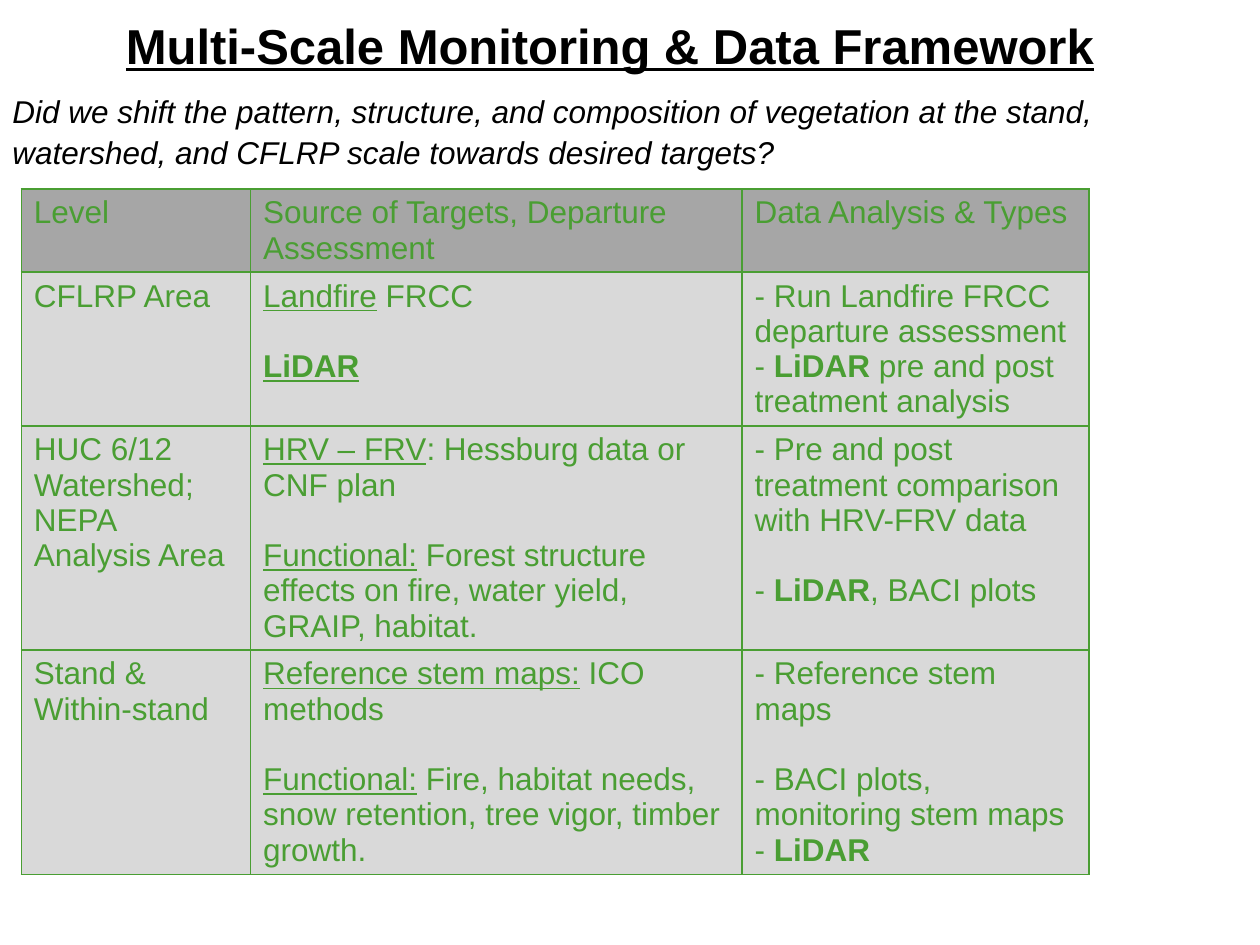
import pptx
import pptx.dml.color
import pptx.enum.shapes
import pptx.enum.text
import pptx.oxml
import pptx.oxml.ns
import pptx.util
from pptx.util import Cm

FONT = "Arial"
COLORS = {
    "black": "000000",
    "white": "FFFFFF",
    "green": "4A9E33",
    "header": "A6A6A6",
    "body": "D9D9D9",
}
GAP = pptx.util.Pt(20.1)  # one text line between groups in a cell

COLUMN_WIDTHS = [4.62, 9.91, 6.99]
ROW_HEIGHTS = [1.6, 2.97, 3.66, 3.66]

# A cell is a list of groups, a group a list of paragraphs,
# a paragraph a list of (text, style) runs: b bold, i italic, u underlined.
LIDAR_ITEM = [("- ", ""), ("LiDAR", "b")]
ROWS = [
    [
        [[[("Level", "")]]],
        [[[("Source of Targets, Departure Assessment", "")]]],
        [[[("Data Analysis & Types", "")]]],
    ],
    [
        [[[("CFLRP Area", "")]]],
        [[[("Landfire", "u"), (" FRCC", "")]], [[("LiDAR", "bu")]]],
        [[[("- Run Landfire FRCC departure assessment", "")],
          LIDAR_ITEM + [(" pre and post treatment analysis", "")]]],
    ],
    [
        [[[("HUC 6/12 Watershed; NEPA Analysis Area", "")]]],
        [[[("HRV – FRV", "u"), (": Hessburg data or CNF plan", "")]],
         [[("Functional:", "u"),
           (" Forest structure effects on fire, water yield, GRAIP, habitat.", "")]]],
        [[[("- Pre and post treatment comparison with HRV-FRV data", "")]],
         [LIDAR_ITEM + [(", BACI plots", "")]]],
    ],
    [
        [[[("Stand & Within-stand", "")]]],
        [[[("Reference stem maps:", "u"), (" ", "i"), ("ICO methods", "")]],
         [[("Functional:", "u"),
           (" Fire, habitat needs, snow retention, tree vigor, timber growth.", "")]]],
        [[[("- Reference stem maps", "")]],
         [[("- BACI plots, monitoring stem maps", "")], LIDAR_ITEM]],
    ],
]


def rgb(name):
    return pptx.dml.color.RGBColor.from_string(COLORS[name])


def add_run(paragraph, text, size, color, style=""):
    run = paragraph.add_run()
    run.text = text
    run.font.name = FONT
    run.font.size = pptx.util.Pt(size)
    run.font.color.rgb = rgb(color)
    run.font.bold = "b" in style
    run.font.italic = "i" in style
    run.font.underline = "u" in style


def add_title(slide, left, top, width, height):
    title = slide.shapes.title
    title.left, title.top, title.width, title.height = left, top, width, height
    frame = title.text_frame
    frame.auto_size = pptx.enum.text.MSO_AUTO_SIZE.NONE
    frame.vertical_anchor = pptx.enum.text.MSO_ANCHOR.MIDDLE
    frame.margin_top = frame.margin_bottom = 0
    paragraph = frame.paragraphs[0]
    paragraph.alignment = pptx.enum.text.PP_ALIGN.CENTER
    add_run(paragraph, "Multi-Scale Monitoring & Data Framework", 28, "black", "bu")


def add_question(slide, left, top, width, height):
    shape = slide.shapes.add_shape(
        pptx.enum.shapes.MSO_SHAPE.RECTANGLE, left, top, width, height)
    shape.shadow.inherit = False
    shape.fill.solid()
    shape.fill.fore_color.rgb = rgb("white")
    shape.line.fill.background()
    frame = shape.text_frame
    frame.word_wrap = True
    frame.auto_size = pptx.enum.text.MSO_AUTO_SIZE.SHAPE_TO_FIT_TEXT
    frame.vertical_anchor = pptx.enum.text.MSO_ANCHOR.TOP
    paragraph = frame.paragraphs[0]
    paragraph.alignment = pptx.enum.text.PP_ALIGN.LEFT
    paragraph.line_spacing = 1.08
    add_run(paragraph,
            "Did we shift the pattern, structure, and composition of vegetation at "
            "the stand, watershed, and CFLRP scale towards desired targets?",
            18, "black", "i")


def add_borders(cell, color):
    properties = cell._tc.get_or_add_tcPr()
    for side in ("lnL", "lnR", "lnT", "lnB"):
        properties.append(pptx.oxml.parse_xml(
            f'<a:{side} {pptx.oxml.ns.nsdecls("a")} w="12700"><a:solidFill>'
            f'<a:srgbClr val="{COLORS[color]}"/></a:solidFill></a:{side}>'))


def fill_cell(cell, groups, background):
    add_borders(cell, "green")
    cell.fill.solid()
    cell.fill.fore_color.rgb = rgb(background)
    frame = cell.text_frame
    paragraph = None
    for group in groups:
        for position, runs in enumerate(group):
            if paragraph is None:
                paragraph = frame.paragraphs[0]
            else:
                paragraph = frame.add_paragraph()
                if position == 0:
                    paragraph.space_before = GAP
            for text, style in runs:
                add_run(paragraph, text, 18, "green", style)


def add_framework_table(slide, left, top):
    table = slide.shapes.add_table(
        len(ROWS), len(COLUMN_WIDTHS), left, top,
        Cm(sum(COLUMN_WIDTHS)), Cm(sum(ROW_HEIGHTS))).table
    table.first_row = table.horz_banding = False
    for column, width in zip(table.columns, COLUMN_WIDTHS):
        column.width = Cm(width)
    for index, (row, height) in enumerate(zip(table.rows, ROW_HEIGHTS)):
        row.height = Cm(height)
        for cell, groups in zip(row.cells, ROWS[index]):
            fill_cell(cell, groups, "body" if index else "header")


def main():
    presentation = pptx.Presentation()
    presentation.slide_width, presentation.slide_height = Cm(25.4), Cm(19.05)
    slide = presentation.slides.add_slide(presentation.slide_layouts[5])
    slide.background.fill.solid()
    slide.background.fill.fore_color.rgb = rgb("white")

    # Table of levels, then the heading and the question above it
    add_framework_table(slide, Cm(0.43), Cm(3.81))
    add_title(slide, Cm(1.5), Cm(0.43), Cm(21.59), Cm(0.94))
    add_question(slide, Cm(0), Cm(1.68), Cm(22.43), Cm(1.8))

    presentation.save("out.pptx")


if __name__ == "__main__":
    main()
